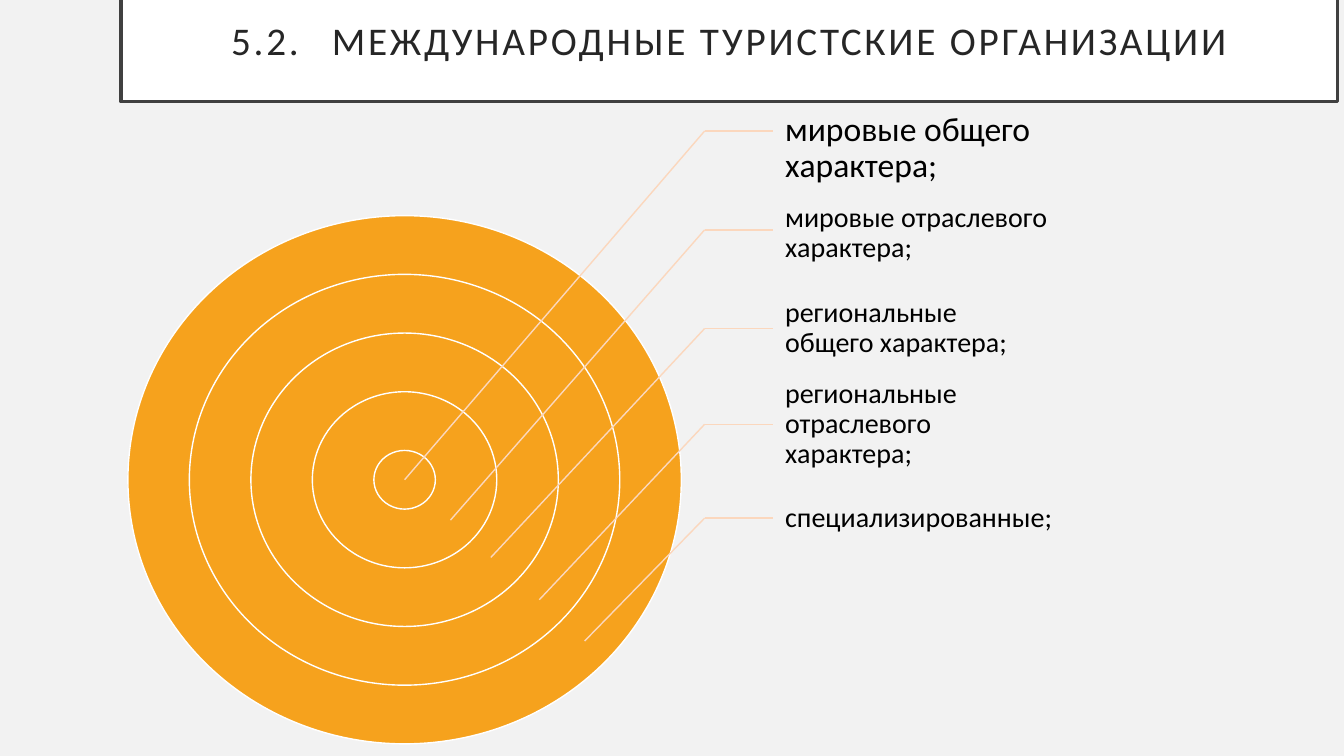
from dataclasses import dataclass

from lxml import etree
from pptx import Presentation
from pptx.dml.color import RGBColor
from pptx.enum import shapes, text
from pptx.oxml.ns import qn
from pptx.util import Pt


@dataclass(frozen=True)
class Theme:
    font: str = "Calibri"
    background: str = "F2F2F2"
    white: str = "FFFFFF"
    frame: str = "404040"
    heading: str = "262626"
    ring: str = "F6A21D"
    leader: str = "FBD7BD"
    body: str = "000000"
    heading_size: int = 28
    lead_size: int = 24
    body_size: int = 20


THEME = Theme()
TITLE = "5.2.\tМЕЖДУНАРОДНЫЕ ТУРИСТСКИЕ ОРГАНИЗАЦИИ"
RING_CENTRE = (289, 342.7)
RING_RADII = (21.96, 20.96)  # innermost ring; the others are odd multiples
LABEL_LEFT, LABEL_HEIGHT, ELBOW = 552.2, 67, 503.3

# wording, label top, label width, type size, leader height, leader end in the rings
LABELS = (
    ("мировые общего характера;", 72.7, 198, THEME.lead_size, 93.6, RING_CENTRE),
    ("мировые отраслевого характера;", 133.2, 198, THEME.body_size, 164.2, (321.8, 371.5)),
    ("региональные общего характера;", 201.2, 198, THEME.body_size, 234.7, (350.6, 398.2)),
    ("региональные отраслевого характера;", 269.6, 198, THEME.body_size, 303.1, (385.2, 428.4)),
    ("специализированные;", 336.6, 223, THEME.body_size, 370.1, (417.6, 457.9)),
)


def colour(value):
    return RGBColor.from_string(value)


def paint(shape, fill, line, width):
    shape.fill.solid()
    shape.fill.fore_color.rgb = colour(fill)
    shape.line.color.rgb = colour(line)
    shape.line.width = Pt(width)


def write(box, wording, size, ink, align, insets):
    """Set one middle-anchored paragraph; insets are left, top, right, bottom."""
    frame = box.text_frame
    frame.text = wording
    frame.word_wrap = True
    frame.auto_size = text.MSO_AUTO_SIZE.NONE
    frame.vertical_anchor = text.MSO_ANCHOR.MIDDLE
    (frame.margin_left, frame.margin_top,
     frame.margin_right, frame.margin_bottom) = map(Pt, insets)
    para = frame.paragraphs[0]
    para.alignment = align
    para.line_spacing = 0.9
    span = para.runs[0]
    span.font.name = THEME.font
    span.font.size = Pt(size)
    span.font.color.rgb = colour(ink)
    return span


def add_title(page):
    title = page.shapes.title
    title.left, title.top, title.width, title.height = map(Pt, (86.4, -41.8, 869, 114.5))
    paint(title, THEME.white, THEME.frame, 2.5)
    span = write(title, TITLE, THEME.heading_size, THEME.heading,
                 text.PP_ALIGN.CENTER, (14.4, 45, 14.4, 14.4))
    span.font._element.set("spc", "200")


def add_ring(page, multiple):
    x, y = RING_CENTRE
    rx, ry = (radius * multiple for radius in RING_RADII)
    ring = page.shapes.add_shape(shapes.MSO_SHAPE.OVAL, Pt(x - rx), Pt(y - ry),
                                 Pt(2 * rx), Pt(2 * ry))
    ring.shadow.inherit = False
    paint(ring, THEME.ring, THEME.white, 1)


def add_line(page, start, end):
    line = page.shapes.add_connector(shapes.MSO_CONNECTOR.STRAIGHT,
                                     *map(Pt, (*start, *end)))
    line.line.color.rgb = colour(THEME.leader)
    line.line.width = Pt(1)
    etree.SubElement(line._element.spPr, qn("a:effectLst"))
    return line


def add_label(page, wording, top, width, size, level, target):
    """Add a label and the bent leader that ties it to its ring."""
    box = page.shapes.add_textbox(Pt(LABEL_LEFT), Pt(top), Pt(width), Pt(LABEL_HEIGHT))
    write(box, wording, size, THEME.body, text.PP_ALIGN.LEFT, (8.6, 1.4, 1.4, 1.4))
    level_line = add_line(page, (ELBOW, level), (LABEL_LEFT, level))
    if abs(top + LABEL_HEIGHT / 2 - level) < 0.1:
        level_line.end_connect(box, 1)
    add_line(page, (ELBOW, level), target)


def main():
    deck = Presentation()
    deck.slide_width, deck.slide_height = Pt(960), Pt(540)
    page = deck.slides.add_slide(deck.slide_layouts[5])
    page.background.fill.solid()
    page.background.fill.fore_color.rgb = colour(THEME.background)
    add_title(page)
    for multiple in range(9, 0, -2):
        add_ring(page, multiple)
    for label in LABELS:
        add_label(page, *label)
    deck.save("out.pptx")


if __name__ == "__main__":
    main()
